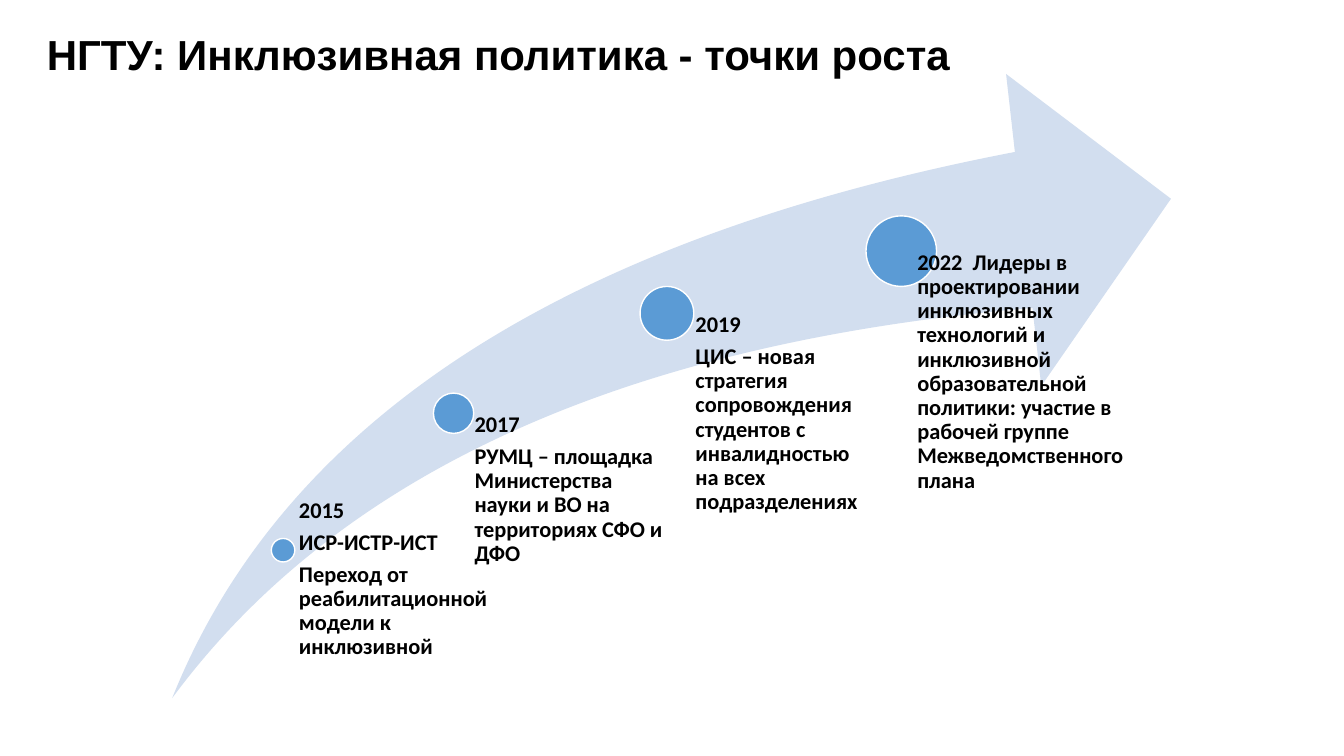
"""Build the slide on growth points of the university's inclusive policy."""
from dataclasses import dataclass

from pptx import Presentation
from pptx.dml.color import RGBColor
from pptx.enum.shapes import MSO_SHAPE as Preset
from pptx.enum.text import MSO_ANCHOR as Anchor
from pptx.shapes.autoshape import Shape
from pptx.slide import Slide
from pptx.text.text import TextFrame
from pptx.util import Inches, Pt

WIDTH, HEIGHT = Inches(13.33), Inches(7.5)
COLUMNS, ROWS = 16, 9
BLACK, WHITE, PALE_BLUE, BLUE = "000000", "FFFFFF", "D2DEEF", "5B9BD5"
BODY_SIZE = 16
AFTER_SHARE = 0.35


@dataclass(frozen=True)
class Area:
    """A rectangle measured in grid columns and rows."""
    left: float
    top: float
    width: float
    height: float


@dataclass(frozen=True)
class Milestone:
    """A dot on the arrow with the story that hangs beside it."""
    center_x: float
    center_y: float
    diameter: float
    story_area: Area
    indent: float
    story: tuple[str, ...]

    def dot_area(self) -> Area:
        """Return the square around the dot."""
        radius = self.diameter / 2
        return Area(self.center_x - radius, self.center_y - radius,
                    self.diameter, self.diameter)


TITLE = "НГТУ: Инклюзивная политика - точки роста"
TITLE_AREA = Area(0.44, 0.17, 14.4, 1.01)
ARROW_AREA = Area(2.05, 0.88, 11.89, 7.43)
MILESTONES = (
    Milestone(3.37, 6.55, 0.28, Area(3.42, 5.94, 2.74, 2.98), 0.14, (
        "2015",
        "ИСР-ИСТР-ИСТ",
        "Переход от реабилитационной модели к инклюзивной",
    )),
    Milestone(5.4, 4.92, 0.48, Area(5.4, 4.92, 2.5, 3.39), 0.25, (
        "2017",
        "РУМЦ – площадка Министерства науки и ВО на территориях СФО и ДФО",
    )),
    Milestone(7.94, 3.73, 0.64, Area(7.94, 3.73, 2.5, 4.58), 0.34, (
        "2019",
        "ЦИС – новая стратегия сопровождения студентов с инвалидностью "
        "на всех подразделениях",
    )),
    Milestone(10.73, 2.99, 0.84, Area(10.48, 2.99, 3.37, 5.32), 0.44, (
        "2022  Лидеры в проектировании инклюзивных технологий и инклюзивной "
        "образовательной политики: участие в рабочей группе "
        "Межведомственного плана",
    )),
)


def color(value: str) -> RGBColor:
    """Turn a hex string into a colour."""
    return RGBColor.from_string(value)


def across(columns: float) -> int:
    """Convert grid columns to a length."""
    return round(WIDTH * columns / COLUMNS)


def down(rows: float) -> int:
    """Convert grid rows to a length."""
    return round(HEIGHT * rows / ROWS)


def place(area: Area) -> tuple[int, int, int, int]:
    """Convert a grid area to left, top, width and height."""
    return across(area.left), down(area.top), across(area.width), down(area.height)


def add_preset(slide: Slide, preset: Preset, area: Area, fill: str) -> Shape:
    """Draw a filled preset shape without shadow or outline."""
    shape = slide.shapes.add_shape(preset, *place(area))
    shape.shadow.inherit = False
    shape.fill.solid()
    shape.fill.fore_color.rgb = color(fill)
    shape.line.fill.background()
    return shape


def add_text(slide: Slide, area: Area, lines: tuple[str, ...], font_name: str,
             size: float, after: float = 0) -> TextFrame:
    """Write bold black paragraphs into a wrapping text box."""
    frame = slide.shapes.add_textbox(*place(area)).text_frame
    frame.word_wrap = True
    for index, line in enumerate(lines):
        paragraph = frame.add_paragraph() if index else frame.paragraphs[0]
        paragraph.line_spacing = 0.9
        paragraph.space_after = Pt(after)
        run = paragraph.add_run()
        run.text = line
        run.font.name = font_name
        run.font.size = Pt(size)
        run.font.bold = True
        run.font.color.rgb = color(BLACK)
    return frame


def add_milestone(slide: Slide, milestone: Milestone) -> None:
    """Draw one dot and its story."""
    dot = add_preset(slide, Preset.OVAL, milestone.dot_area(), BLUE)
    dot.line.color.rgb = color(WHITE)
    dot.line.width = Pt(1)
    story = add_text(slide, milestone.story_area, milestone.story, "Calibri",
                     BODY_SIZE, BODY_SIZE * AFTER_SHARE)
    story.margin_left = across(milestone.indent)
    story.margin_top = story.margin_right = story.margin_bottom = 0


def main() -> None:
    """Assemble and save the slide."""
    deck = Presentation()
    deck.slide_width, deck.slide_height = WIDTH, HEIGHT
    slide = deck.slides.add_slide(deck.slide_layouts[6])
    heading = add_text(slide, TITLE_AREA, (TITLE,), "Arial", 30)
    heading.vertical_anchor = Anchor.MIDDLE
    growth_arrow = add_preset(slide, Preset.SWOOSH_ARROW, ARROW_AREA, PALE_BLUE)
    growth_arrow.adjustments[0] = growth_arrow.adjustments[1] = 0.25
    for milestone in MILESTONES:
        add_milestone(slide, milestone)
    deck.save("out.pptx")


if __name__ == "__main__":
    main()
